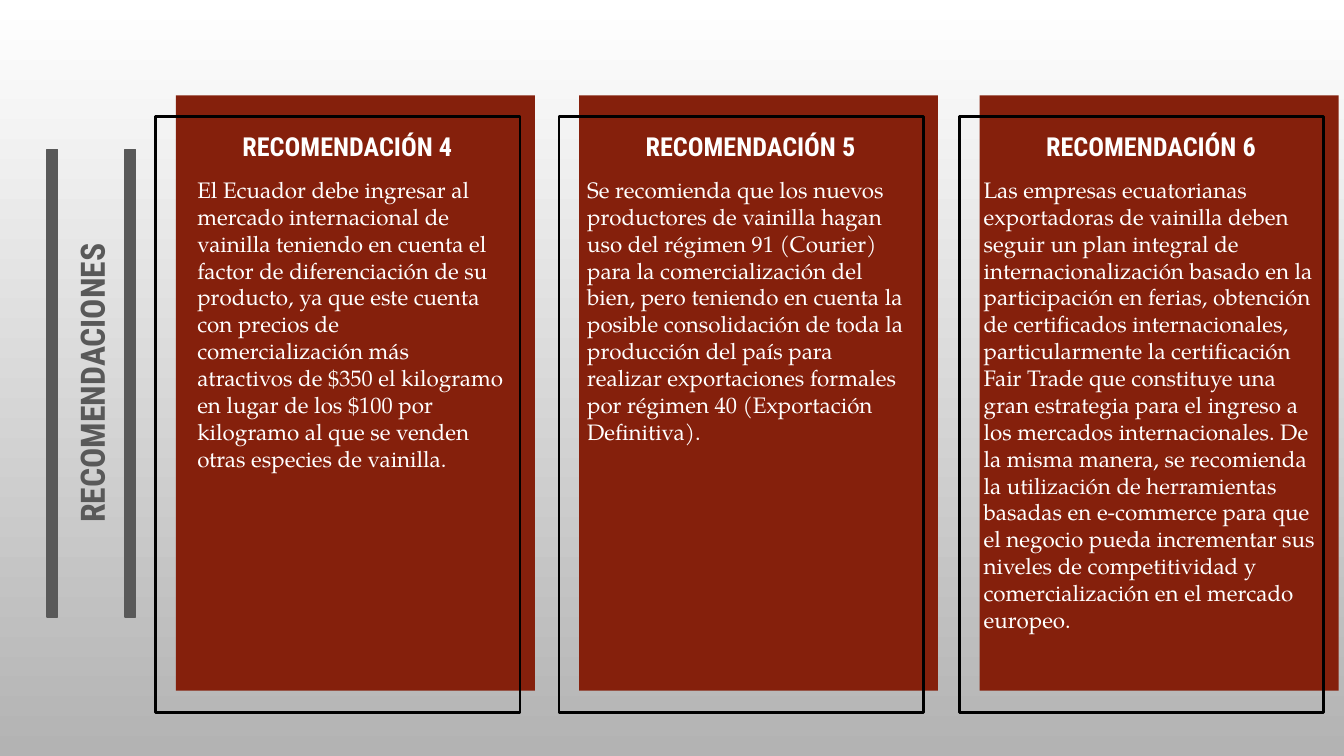
import pptx
import pptx.util
import pptx.dml.color
import pptx.enum.shapes
import pptx.enum.text

Inches = pptx.util.Inches
RGBColor = pptx.dml.color.RGBColor
Align = pptx.enum.text.PP_ALIGN
Anchor = pptx.enum.text.MSO_ANCHOR

WHITE = RGBColor(0xFF, 0xFF, 0xFF)
SILVER = RGBColor(0xB3, 0xB3, 0xB3)
GRAY = RGBColor(0x59, 0x59, 0x59)
BLACK = RGBColor(0, 0, 0)
RED = RGBColor(0x85, 0x20, 0x0C)

# Panel left, body left, body width, number, text
CARDS = [
    (1.31, 1.37, 2.5, 4,
     "El Ecuador debe ingresar al mercado internacional de vainilla teniendo "
     "en cuenta el factor de diferenciación de su producto, ya que este cuenta "
     "con precios de comercialización más atractivos de $350 el kilogramo en "
     "lugar de los $100 por kilogramo al que se venden otras especies de "
     "vainilla."),
    (4.31, 4.27, 2.6, 5,
     "Se recomienda que los nuevos productores de vainilla hagan uso del "
     "régimen 91 (Courier) para la comercialización del bien, pero teniendo en "
     "cuenta la posible consolidación de toda la producción del país para "
     "realizar exportaciones formales por régimen 40 (Exportación Definitiva)."),
    (7.29, 7.22, 2.71, 6,
     "Las empresas ecuatorianas exportadoras de vainilla deben seguir un plan "
     "integral de internacionalización basado en la participación en ferias, "
     "obtención de certificados internacionales, particularmente la "
     "certificación Fair Trade que constituye una gran estrategia para el "
     "ingreso a los mercados internacionales. De la misma manera, se recomienda "
     "la utilización de herramientas basadas en e-commerce para que el negocio "
     "pueda incrementar sus niveles de competitividad y comercialización en el "
     "mercado europeo."),
]


def write(frame, text, font="Roboto Condensed", size=14, color=WHITE,
          bold=True, align=Align.CENTER):
    para = frame.paragraphs[0]
    para.alignment = align
    run = para.add_run()
    run.text = text
    run.font.name = font
    run.font.size = pptx.util.Pt(size)
    run.font.bold = bold
    run.font.color.rgb = color


class Deck:
    head = "Roboto Condensed"
    body = "TeX Gyre Pagella"
    inset = Inches(0.1)

    def __init__(self, slide):
        self.slide = slide

    def back(self, top, base):
        """Fill the background with a gradient from top to base."""
        fill = self.slide.background.fill
        fill.gradient()
        fill.gradient_angle = 270
        for stop, color in zip(fill.gradient_stops, (top, base)):
            stop.color.rgb = color

    def rect(self, *box, fill=None, line=None, width=0.75, turn=0):
        shape = self.slide.shapes.add_shape(
            pptx.enum.shapes.MSO_SHAPE.RECTANGLE, *map(Inches, box))
        shape.shadow.inherit = False
        shape.rotation = turn
        if fill is None:
            shape.fill.background()
        else:
            shape.fill.solid()
            shape.fill.fore_color.rgb = fill
        if line is None:
            shape.line.fill.background()
        else:
            shape.line.color.rgb = line
            shape.line.width = pptx.util.Pt(width)

    def text(self, words, *box, turn=0, anchor=Anchor.TOP, **style):
        shape = self.slide.shapes.add_textbox(*map(Inches, box))
        shape.rotation = turn
        frame = shape.text_frame
        frame.word_wrap = True
        frame.vertical_anchor = anchor
        frame.margin_left = frame.margin_right = self.inset
        frame.margin_top = frame.margin_bottom = self.inset
        write(frame, words, **style)

    def card(self, left, start, wide, number, words):
        """Draw a panel, its offset frame, a heading and body text."""
        self.rect(left, 0.71, 2.67, 4.43, fill=RED)
        self.rect(left - 0.15, 0.87, 2.71, 4.43, line=BLACK, width=1.5)
        self.text(f"RECOMENDACIÓN {number}", left + 0.17, 0.87, 2.21, 0.51,
                  font=self.head)
        self.text(words, start, 1.21, wide, 1.76, font=self.body, size=12,
                  bold=False, align=Align.LEFT)


def main():
    show = pptx.Presentation()
    show.slide_width = Inches(10)
    show.slide_height = Inches(10 * 9 / 16)
    deck = Deck(show.slides.add_slide(show.slide_layouts[6]))
    deck.back(WHITE, SILVER)
    deck.text("RECOMENDACIONES", -2.49, 2.45, 6.04, 0.8, turn=270,
              anchor=Anchor.BOTTOM, font=deck.head, size=18, color=GRAY)
    for left in (-1.35, -0.77):
        deck.rect(left, 2.81, 3.48, 0.08, fill=GRAY, line=GRAY, turn=270)
    for card in CARDS:
        deck.card(*card)
    show.save("out.pptx")


if __name__ == "__main__":
    main()
